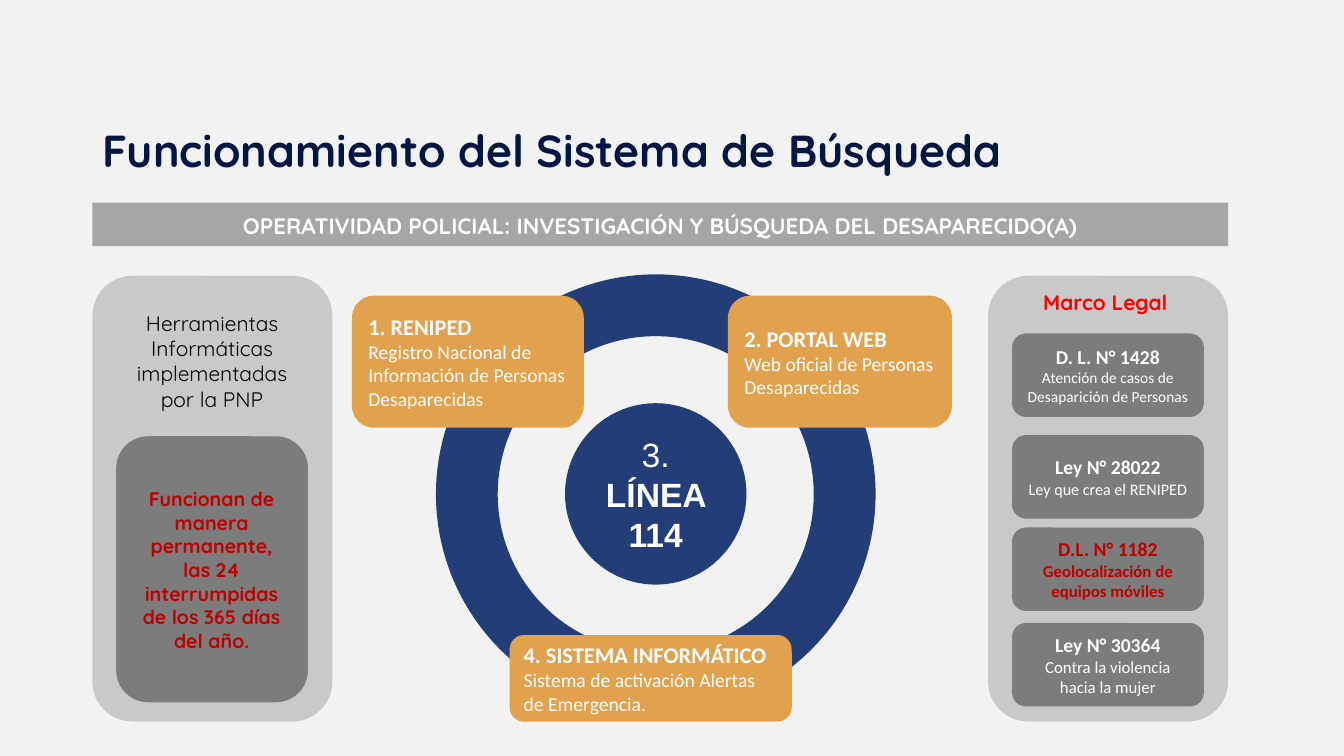
from pptx import Presentation
from pptx.dml.color import RGBColor
from pptx.enum.shapes import MSO_SHAPE
from pptx.enum.text import MSO_ANCHOR, PP_ALIGN
from pptx.util import Pt

BACKGROUND = RGBColor(0xF2, 0xF2, 0xF2)
NAVY = RGBColor(0x01, 0x16, 0x43)
BLUE = RGBColor(0x23, 0x3D, 0x79)
ORANGE = RGBColor(0xE2, 0xA1, 0x4D)
BANNER_GRAY = RGBColor(0xA6, 0xA6, 0xA6)
LIGHT_GRAY = RGBColor(0xC9, 0xC9, 0xC9)
DARK_GRAY = RGBColor(0x7C, 0x7C, 0x7C)
WHITE = RGBColor(0xFF, 0xFF, 0xFF)
BLACK = RGBColor(0x00, 0x00, 0x00)
RED = RGBColor(0xFF, 0x00, 0x00)
DARK_RED = RGBColor(0xC0, 0x00, 0x00)

presentation = Presentation()
presentation.slide_width = Pt(960)
presentation.slide_height = Pt(540)
slide = presentation.slides.add_slide(presentation.slide_layouts[6])
slide.background.fill.solid()
slide.background.fill.fore_color.rgb = BACKGROUND


def add_block(kind, box, color, outlined=False):
    block = slide.shapes.add_shape(kind, *map(Pt, box))
    block.shadow.inherit = False
    block.fill.solid()
    block.fill.fore_color.rgb = color
    if outlined:
        block.line.color.rgb = color
        block.line.width = Pt(2)
    else:
        block.line.fill.background()
    return block


def write(holder, lines, font, color, align=PP_ALIGN.CENTER, anchor=MSO_ANCHOR.MIDDLE):
    frame = holder.text_frame
    frame.word_wrap = True
    frame.vertical_anchor = anchor
    for index, (text, size, bold) in enumerate(lines):
        paragraph = frame.add_paragraph() if index else frame.paragraphs[0]
        paragraph.text = text
        paragraph.alignment = align
        paragraph.font.name = font
        paragraph.font.size = Pt(size)
        paragraph.font.bold = bold
        paragraph.font.color.rgb = color
    return frame


title = slide.shapes.add_textbox(Pt(66), Pt(72), Pt(828), Pt(74.4))
title_frame = write(title, [("Funcionamiento del Sistema de Búsqueda", 32, True)],
                    "Quicksand", NAVY, PP_ALIGN.LEFT)
title_frame.paragraphs[0].line_spacing = 0.9

banner = add_block(MSO_SHAPE.RECTANGLE, (66, 144.8, 811.2, 31), BANNER_GRAY)
banner_frame = write(
    banner, [("OPERATIVIDAD POLICIAL: INVESTIGACIÓN Y BÚSQUEDA DEL DESAPARECIDO(A)", 16, True)],
    "Quicksand", WHITE, anchor=MSO_ANCHOR.TOP)
banner_frame.paragraphs[0].line_spacing = 0.9
banner_frame.margin_left = banner_frame.margin_right = banner_frame.margin_top = Pt(8.6)
banner_frame.margin_bottom = Pt(0)

ring = add_block(MSO_SHAPE.DONUT, (312.4, 197, 312, 312), BLUE, outlined=True)
ring.adjustments[0] = 0.135
hotline = add_block(MSO_SHAPE.OVAL, (404.6, 289, 127.6, 127.6), BLUE, outlined=True)
write(hotline, [("3.", 24, False), ("LÍNEA 114", 24, True)], "Arial", WHITE)

tools = [
    ((251.4, 211.2, 165.6, 94.3), "1. RENIPED",
     "Registro Nacional de Información de Personas Desaparecidas"),
    ((520, 211.2, 160, 94.3), "2. PORTAL WEB", "Web oficial de Personas Desaparecidas"),
    ((364, 453.6, 201.6, 61.9), "4. SISTEMA INFORMÁTICO",
     "Sistema de activación Alertas de Emergencia."),
]
for box, name, description in tools:
    tool = add_block(MSO_SHAPE.ROUNDED_RECTANGLE, box, ORANGE)
    write(tool, [(name, 16, True), (description, 14, False)], "Calibri", WHITE, PP_ALIGN.LEFT)

for panel_left in (66, 705.8):
    add_block(MSO_SHAPE.ROUNDED_RECTANGLE, (panel_left, 197, 171.4, 318.4), LIGHT_GRAY)

add_block(MSO_SHAPE.ROUNDED_RECTANGLE, (83, 311.6, 137, 190), DARK_GRAY)
captions = [
    ((83, 218.2, 137, 80), "Herramientas Informáticas implementadas por la PNP",
     15, False, BLACK, MSO_ANCHOR.TOP),
    ((90.7, 333.4, 121, 147), "Funcionan de manera permanente, las 24 interrumpidas "
     "de los 365 días del año.", 14, True, DARK_RED, MSO_ANCHOR.MIDDLE),
    ((721, 203, 137, 25.2), "Marco Legal", 15, True, RED, MSO_ANCHOR.TOP),
]
for box, text, size, bold, color, anchor in captions:
    caption = slide.shapes.add_textbox(*map(Pt, box))
    write(caption, [(text, size, bold)], "Quicksand", color, anchor=anchor)

laws = [
    (238.2, "D. L. N° 1428", "Atención de casos de Desaparición de Personas", 11, False, WHITE),
    (310.8, "Ley N° 28022", "Ley que crea el RENIPED", 11.5, False, WHITE),
    (376.8, "D.L. N° 1182", "Geolocalización de equipos móviles", 12, True, DARK_RED),
    (445, "Ley N° 30364", "Contra la violencia hacia la mujer", 12, False, WHITE),
]
for top, number, subject, size, bold, color in laws:
    law = add_block(MSO_SHAPE.ROUNDED_RECTANGLE, (722.9, top, 137, 59.6), DARK_GRAY)
    write(law, [(number, 14, True), (subject, size, bold)], "Calibri", color)

presentation.save("out.pptx")
